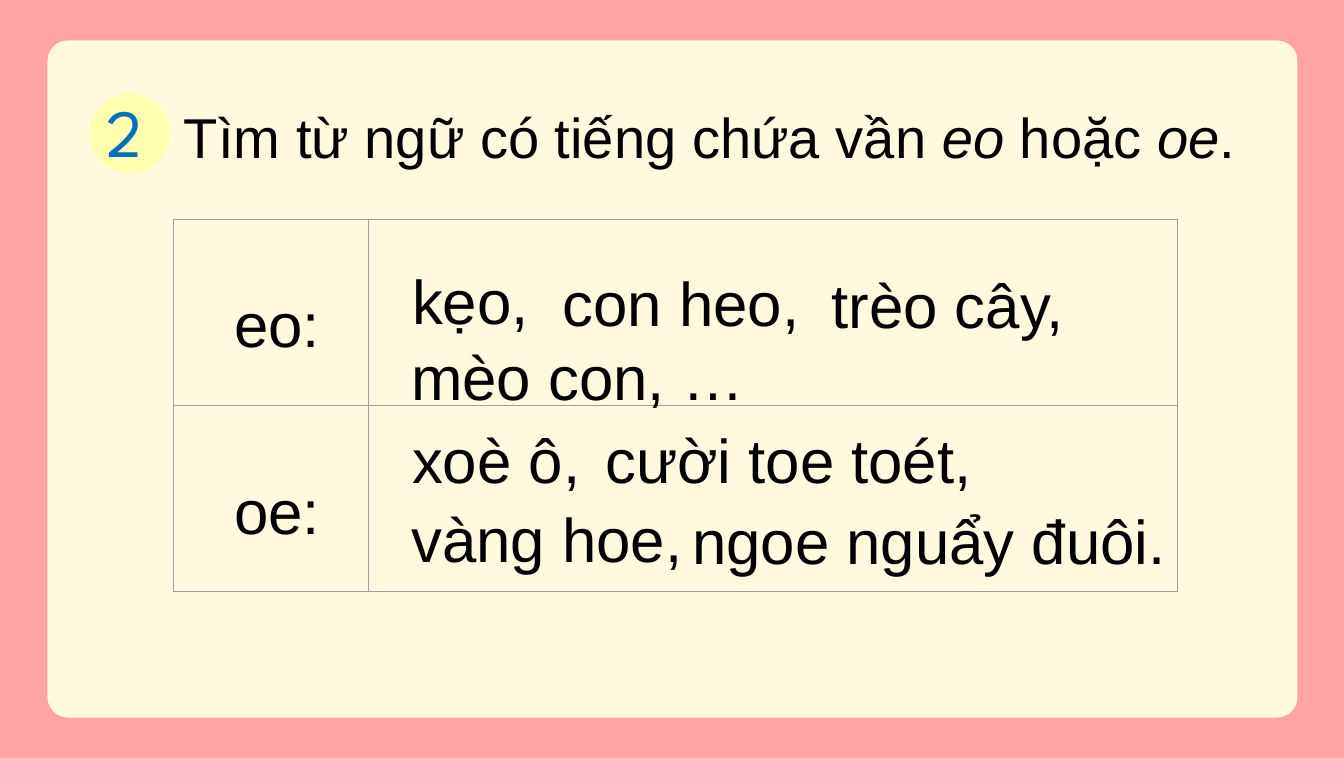
from pptx import Presentation
from pptx import util as u
from pptx.dml.color import RGBColor
from pptx.enum import shapes, text
from pptx.oxml import parse_xml
from pptx.oxml.ns import nsdecls

SCALE = 9144  # 100 px to the inch
COLORS = {
    "pink": "FFA3A4",
    "cream": "FFF9DE",
    "yellow": "FFFFAF",
    "blue": "0070C0",
    "black": "000000",
    "gray": "9E9E9E",
}


def px(*nums):
    return [u.Emu(n * SCALE) for n in nums]


def rgb(name):
    return RGBColor.from_string(COLORS[name])


def write(shape, parts, size=44, font="Arial", color="black", gap=0,
          line=1.07, pad=10, anchor=text.MSO_ANCHOR.TOP):
    """Fill a shape with one paragraph of (words, italic) parts."""
    frame = shape.text_frame
    frame.word_wrap = True
    frame.auto_size = text.MSO_AUTO_SIZE.NONE
    frame.vertical_anchor = anchor
    frame.margin_left = frame.margin_right = px(pad)[0]
    frame.margin_top = frame.margin_bottom = px(pad // 2)[0]
    para = frame.paragraphs[0]
    para.alignment = text.PP_ALIGN.JUSTIFY
    para.line_spacing = line
    para.space_before = para.space_after = u.Pt(gap)
    for words, slant in parts:
        run = para.add_run()
        run.text = words
        run.font.size = u.Pt(size)
        run.font.name = font
        run.font.italic = slant
        run.font.color.rgb = rgb(color)


class Page:
    def __init__(self, deck, back):
        self.slide = deck.slides.add_slide(deck.slide_layouts[5])
        self.items = self.slide.shapes
        fill = self.slide.background.fill
        fill.solid()
        fill.fore_color.rgb = rgb(back)

    def shape(self, kind, box, color):
        item = self.items.add_shape(kind, *px(*box))
        item.shadow.inherit = False
        item.fill.solid()
        item.fill.fore_color.rgb = rgb(color)
        item.line.fill.background()
        return item

    def title(self, box, parts, **style):
        item = self.items.title
        item.left, item.top, item.width, item.height = px(*box)
        # Bring the title in front of the panel
        self.items._spTree.append(item._element)
        write(item, parts, **style)

    def label(self, box, words, **style):
        write(self.items.add_textbox(*px(*box)), [(words, False)], **style)

    def table(self, spot, cols, rows, color):
        size = sum(cols), sum(rows)
        grid = self.items.add_table(len(rows), len(cols), *px(*spot, *size)).table
        grid.first_row = grid.horz_banding = False
        for col, width in zip(grid.columns, px(*cols)):
            col.width = width
        for row, height in zip(grid.rows, px(*rows)):
            row.height = height
        for cell in grid.iter_cells():
            cell.fill.background()
            self.border(cell, color)

    def border(self, cell, color):
        props = cell._tc.get_or_add_tcPr()
        for i, side in enumerate("LRTB"):
            props.insert(i, parse_xml(
                f'<a:ln{side} {nsdecls("a")} w="{u.Pt(0.75)}"><a:solidFill>'
                f'<a:srgbClr val="{COLORS[color]}"/></a:solidFill></a:ln{side}>'))


def main():
    deck = Presentation()
    deck.slide_width, deck.slide_height = px(1330, 750)
    page = Page(deck, "pink")
    kinds = shapes.MSO_SHAPE

    panel = page.shape(kinds.ROUNDED_RECTANGLE, (47, 40, 1237, 670), "cream")
    panel.adjustments[0] = 0.03
    page.shape(kinds.OVAL, (89, 92, 79, 80), "yellow")
    page.label((92, 103, 80, 52), "2", size=48, font="League Spartan",
               color="blue", line=1, pad=13, anchor=text.MSO_ANCHOR.MIDDLE)
    page.title((172, 92, 1115, 77), [
        ("Tìm từ ngữ có tiếng chứa vần", False), (" eo", True),
        (" hoặc ", False), ("oe", True), (".", False)], size=40)

    page.table((172, 217), (193, 800), (184, 184), "gray")
    words = [
        (222, 273, 145, "eo:"),
        (222, 458, 145, "oe:"),
        (398, 250, 183, "kẹo,"),
        (547, 252, 393, "con heo,"),
        (813, 254, 393, "trèo cây,"),
        (397, 325, 393, "mèo con, …"),
        (398, 407, 393, "xoè ô,"),
        (589, 407, 618, "cười toe toét,"),
        (397, 485, 618, "vàng hoe,"),
        (675, 487, 618, "ngoe nguẩy đuôi."),
    ]
    for left, top, width, word in words:
        page.label((left, top, width, 84), word, gap=12)

    deck.save("out.pptx")


if __name__ == "__main__":
    main()
